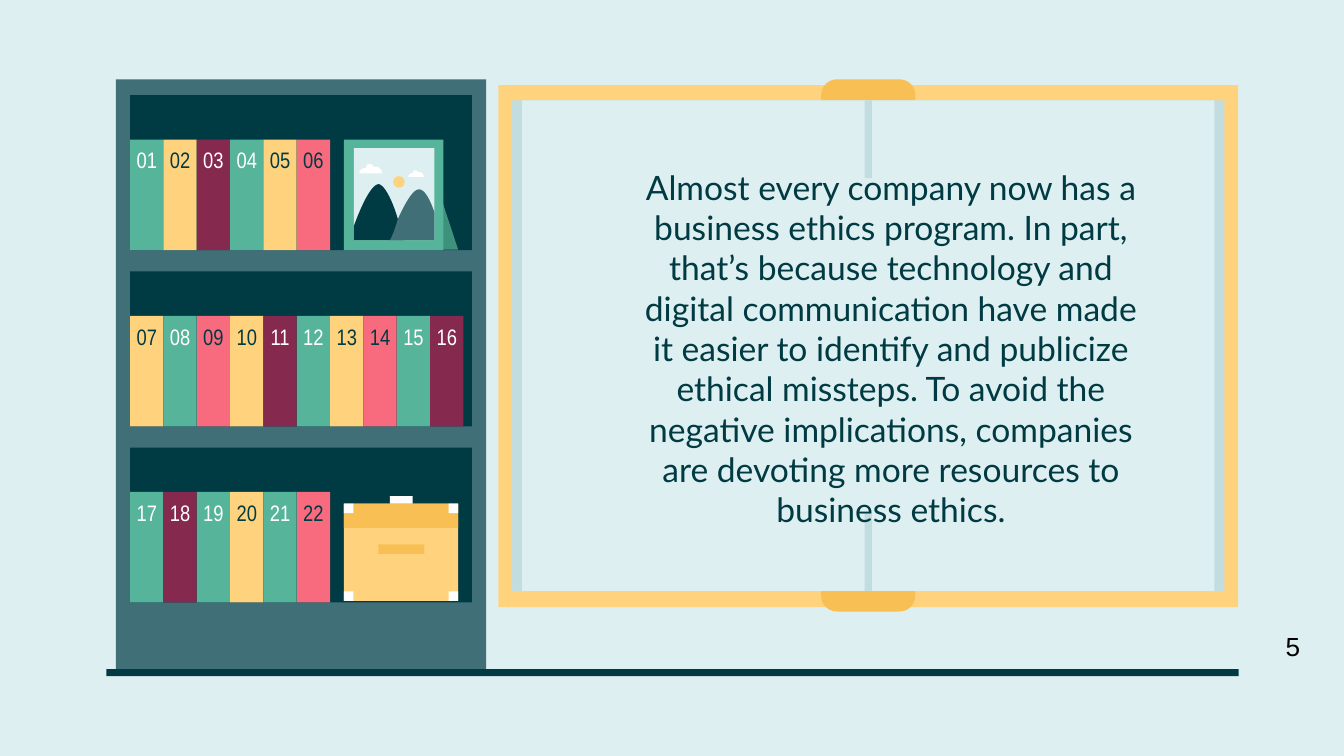
from dataclasses import dataclass

from pptx import Presentation
from pptx.dml.color import RGBColor
from pptx.enum.shapes import MSO_SHAPE as Preset
from pptx.enum.text import MSO_ANCHOR as Anchor, PP_ALIGN as Align
from pptx.util import Cm, Pt

COLORS = {
    "pale": "DEEFF1", "mist": "C2DDE0", "navy": "003A42", "slate": "416F78",
    "yellow": "FFD37E", "amber": "F8C054", "green": "55B499", "fern": "3C927A",
    "plum": "86294E", "pink": "F86B7F", "white": "FFFFFF", "black": "000000",
}
ETHICS = (
    "Almost every company now has a business ethics program. In part, that’s because "
    "technology and digital communication have made it easier to identify and publicize "
    "ethical missteps. To avoid the negative implications, companies are devoting more "
    "resources to business ethics."
)
SHELF_LEFT, SHELF_TOP, SHELF_WIDTH, SHELF_HEIGHT, SHELF_STEP = 2.46, 1.8, 6.46, 2.93, 3.33
BOOK_WIDTH, BOOK_HEIGHT = 0.63, 2.09


@dataclass(frozen=True)
class Block:
    """A filled preset shape, measured in centimetres."""
    left: float
    top: float
    width: float
    height: float
    color: str
    preset: Preset = Preset.RECTANGLE


@dataclass(frozen=True)
class Outline:
    """A closed outline: one-point segments are lines, three-point ones Bézier curves."""
    color: str
    start: tuple
    segments: tuple


BOARD = (
    Block(9.42, 1.61, 13.98, 9.87, "yellow"),
    Block(15.52, 1.5, 1.78, 10.06, "amber", Preset.ROUNDED_RECTANGLE),
    Block(9.68, 1.9, 13.46, 9.27, "mist"),
    Block(9.87, 1.9, 13.08, 9.27, "pale"),
    Block(16.34, 1.9, 0.14, 1.47, "mist"),
    Block(16.34, 9.7, 0.14, 1.47, "mist"),
)
SHELVES = (
    ("green", "yellow", "plum", "green", "yellow", "pink"),
    ("yellow", "green", "pink", "yellow", "plum", "green", "yellow", "pink", "green", "plum"),
    ("green", "plum", "green", "yellow", "green", "pink"),
)
STAND = Outline("fern", (8.31, 3.66), (((8.31, 4.72),), ((8.66, 4.72),)))
FRAME = (
    Block(6.5, 2.64, 1.88, 2.09, "green"),
    Block(6.69, 2.8, 1.52, 1.74, "pale"),
)
MOUNTAINS = (
    Outline("navy", (7.16, 3.48), (
        ((7.01, 3.48), (6.81, 3.94), (6.69, 4.27)),
        ((6.69, 4.54),),
        ((7.64, 4.54),),
        ((7.62, 4.47), (7.57, 4.32), (7.52, 4.14)),
        ((7.44, 3.86), (7.29, 3.51), (7.16, 3.48)),
    )),
    Outline("slate", (7.92, 3.58), (
        ((7.8, 3.58), (7.65, 3.86), (7.52, 4.14)),
        ((7.47, 4.32), (7.42, 4.45), (7.37, 4.54)),
        ((8.21, 4.54),),
        ((8.21, 4.01),),
        ((8.13, 3.78), (8.03, 3.58), (7.92, 3.58)),
    )),
)
SUN = Block(7.43, 3.33, 0.22, 0.22, "yellow", Preset.OVAL)
CLOUD = Outline("white", (0.2, 0), (
    ((0.15, 0), (0.13, 0.03), (0.13, 0.07)),
    ((0.13, 0.08), (0.12, 0.08), (0.1, 0.08)),
    ((0.05, 0.08), (0, 0.13), (0, 0.18)),
    ((0.43, 0.18),),
    ((0.43, 0.13), (0.41, 0.1), (0.38, 0.08)),
    ((0.36, 0.05), (0.33, 0.05), (0.3, 0.05)),
    ((0.3, 0.05), (0.28, 0.05), (0.26, 0.05)),
    ((0.26, 0.02), (0.23, 0), (0.2, 0)),
))
BRIEFCASE = (
    Block(6.5, 9.52, 2.16, 1.84, "yellow"),
    Block(6.5, 9.52, 2.16, 0.46, "amber"),
    Block(7.15, 10.29, 0.87, 0.18, "amber"),
    *(Block(x, y, 0.18, 0.18, "white") for y in (9.52, 11.18) for x in (6.5, 8.48)),
    Block(7.37, 9.38, 0.43, 0.14, "white"),
)


def rgb(color: str) -> RGBColor:
    return RGBColor.from_string(COLORS[color])


def paint(shape, color: str) -> None:
    shape.shadow.inherit = False
    shape.fill.solid()
    shape.fill.fore_color.rgb = rgb(color)
    shape.line.fill.background()


def draw_block(shapes, block: Block):
    shape = shapes.add_shape(block.preset, Cm(block.left), Cm(block.top),
                             Cm(block.width), Cm(block.height))
    paint(shape, block.color)
    return shape


def curve_points(a: tuple, b: tuple, c: tuple, d: tuple, steps: int = 10) -> list:
    """Return points along a cubic Bézier curve, leaving out its start."""
    points = []
    for step in range(1, steps + 1):
        t = step / steps
        weights = ((1 - t) ** 3, 3 * t * (1 - t) ** 2, 3 * t * t * (1 - t), t ** 3)
        points.append(tuple(sum(w * p[axis] for w, p in zip(weights, (a, b, c, d)))
                            for axis in (0, 1)))
    return points


def draw_outline(shapes, outline: Outline, left: float = 0, top: float = 0,
                 scale: float = 1) -> None:
    points = [outline.start]
    for segment in outline.segments:
        points += curve_points(points[-1], *segment) if len(segment) == 3 else segment
    corners = [(Cm(left + x * scale), Cm(top + y * scale)) for x, y in points]
    builder = shapes.build_freeform(*corners[0])
    builder.add_line_segments(corners[1:], close=True)
    paint(builder.convert_to_shape(), outline.color)


def write(shape, text: str, *, size: float, font: str, color: str, align=Align.CENTER,
          inset_x: float = 0.25, inset_y: float = 0.25, wrap: bool = True) -> None:
    frame = shape.text_frame
    frame.word_wrap = wrap
    frame.vertical_anchor = Anchor.TOP
    frame.margin_left = frame.margin_right = Cm(inset_x)
    frame.margin_top = frame.margin_bottom = Cm(inset_y)
    paragraph = frame.paragraphs[0]
    paragraph.alignment = align
    run = paragraph.add_run()
    run.text = text
    run.font.size = Pt(size)
    run.font.name = font
    run.font.color.rgb = rgb(color)


def draw_bookcase(shapes) -> None:
    draw_block(shapes, Block(2.19, 1.5, 7, 11.15, "slate"))
    number = 1
    for row, books in enumerate(SHELVES):
        top = SHELF_TOP + row * SHELF_STEP
        draw_block(shapes, Block(SHELF_LEFT, top, SHELF_WIDTH, SHELF_HEIGHT, "navy"))
        for column, color in enumerate(books):
            book = draw_block(shapes, Block(SHELF_LEFT + column * BOOK_WIDTH,
                                            top + SHELF_HEIGHT - BOOK_HEIGHT,
                                            BOOK_WIDTH, BOOK_HEIGHT, color))
            write(book, f"{number:02d}", size=12, font="Arial Narrow", inset_x=0, inset_y=0.13,
                  color="white" if color in ("green", "plum") else "navy")
            number += 1


def draw_landscape(shapes) -> None:
    draw_outline(shapes, STAND)
    for block in FRAME:
        draw_block(shapes, block)
    for mountain in MOUNTAINS:
        draw_outline(shapes, mountain)
    draw_block(shapes, SUN)
    draw_outline(shapes, CLOUD, 6.79, 3.1)
    draw_outline(shapes, CLOUD, 7.72, 3.22, 0.67)


def main() -> None:
    deck = Presentation()
    deck.slide_width, deck.slide_height = Cm(25.4), Cm(14.29)
    slide = deck.slides.add_slide(deck.slide_layouts[6])
    slide.background.fill.solid()
    slide.background.fill.fore_color.rgb = rgb("pale")
    shapes = slide.shapes

    board = shapes.add_group_shape().shapes
    for block in BOARD:
        draw_block(board, block)
    statement = shapes.add_textbox(Cm(11.71), Cm(2.9), Cm(10.26), Cm(1.12))
    write(statement, ETHICS, size=18, font="Lato", color="navy")

    draw_bookcase(shapes)
    draw_landscape(shapes.add_group_shape().shapes)
    briefcase = shapes.add_group_shape().shapes
    for block in BRIEFCASE:
        draw_block(briefcase, block)
    draw_block(shapes, Block(2.01, 12.65, 21.4, 0.13, "navy"))

    page_number = shapes.add_textbox(Cm(24.05), Cm(11.79), Cm(0.79), Cm(0.86))
    write(page_number, "5", size=14, font="Arial", color="black", align=Align.LEFT,
          inset_y=0.13, wrap=False)
    deck.save("out.pptx")


if __name__ == "__main__":
    main()
